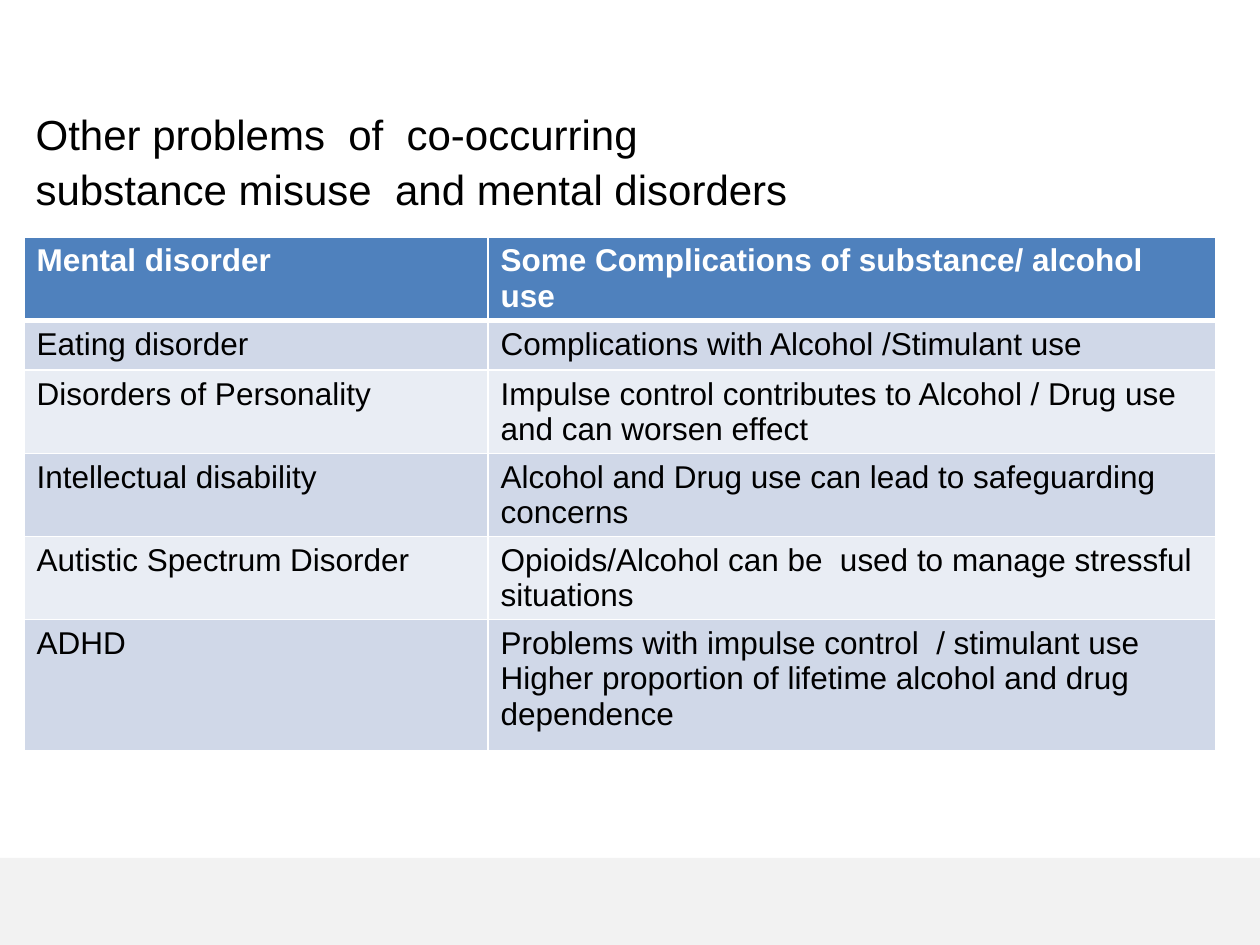
from lxml.etree import SubElement
from pptx import Presentation
from pptx.dml.color import RGBColor
from pptx.enum.shapes import MSO_SHAPE
from pptx.enum.text import MSO_ANCHOR, MSO_AUTO_SIZE, PP_ALIGN
from pptx.oxml.ns import qn
from pptx.util import Emu, Pt

PX = 914400 // 126
COLORS = {"band": "F2F2F2", "header": "4F81BD", "odd": "D0D8E8",
          "even": "E9EDF4", "white": "FFFFFF", "black": "000000"}


def px(*lengths):
    return [Emu(n * PX) for n in lengths]


def write(tf, text, size=18, color="black", bold=False, spacing=None):
    tf.word_wrap = True
    for i, line in enumerate(text.split("\n")):
        p = tf.paragraphs[0] if i == 0 else tf.add_paragraph()
        p.alignment = PP_ALIGN.LEFT
        p.line_spacing = spacing
        r = p.add_run()
        r.text = line
        r.font.name = "Arial"
        r.font.size = Pt(size)
        r.font.bold = bold
        r.font.color.rgb = RGBColor.from_string(COLORS[color])


prs = Presentation()
prs.slide_width, prs.slide_height = px(1260, 945)
s = prs.slides.add_slide(prs.slide_layouts[5])

# Footer band
band = s.shapes.add_shape(MSO_SHAPE.RECTANGLE, *px(0, 858, 1260, 87))
band.shadow.inherit = False
band.fill.solid()
band.fill.fore_color.rgb = RGBColor.from_string(COLORS["band"])
band.line.fill.background()

# Title
title = s.shapes.title
title.left, title.top, title.width, title.height = px(23, 98, 1062, 115)
tf = title.text_frame
tf.auto_size = MSO_AUTO_SIZE.NONE
tf.vertical_anchor = MSO_ANCHOR.TOP
write(tf, "Other problems  of  co-occurring\nsubstance misuse  and mental disorders",
      size=24, spacing=1.09)

# Table of disorders and complications
rows = [
    ("Mental disorder", "Some Complications of substance/ alcohol  use"),
    ("Eating disorder", "Complications with Alcohol /Stimulant use"),
    ("Disorders of Personality",
     "Impulse control contributes to Alcohol / Drug use and can worsen effect"),
    ("Intellectual disability",
     "Alcohol and Drug use can lead to safeguarding concerns"),
    ("Autistic Spectrum Disorder",
     "Opioids/Alcohol can be  used to manage stressful situations"),
    ("ADHD", "Problems with impulse control  / stimulant use\n"
             "Higher proportion of lifetime alcohol and drug dependence"),
]
table = s.shapes.add_table(len(rows), 2, *px(24, 237, 1192, 534)).table
for col, width in zip(table.columns, px(464, 728)):
    col.width = width
for row, height in zip(table.rows, px(50, 50, 50, 50, 67, 131)):
    row.height = height

for i, texts in enumerate(rows):
    header = i == 0
    fill = "header" if header else "odd" if i % 2 else "even"
    for j, text in enumerate(texts):
        cell = table.cell(i, j)
        write(cell.text_frame, text, color="white" if header else "black", bold=header)
        # White borders, thicker between header and body
        tcPr = cell._tc.get_or_add_tcPr()
        for side in "LRTB":
            thick = (i, side) in ((0, "B"), (1, "T"))
            ln = SubElement(tcPr, qn(f"a:ln{side}"), w=str(Pt(3 if thick else 1)))
            SubElement(SubElement(ln, qn("a:solidFill")), qn("a:srgbClr"),
                       val=COLORS["white"])
        cell.fill.solid()
        cell.fill.fore_color.rgb = RGBColor.from_string(COLORS[fill])

prs.save("out.pptx")
